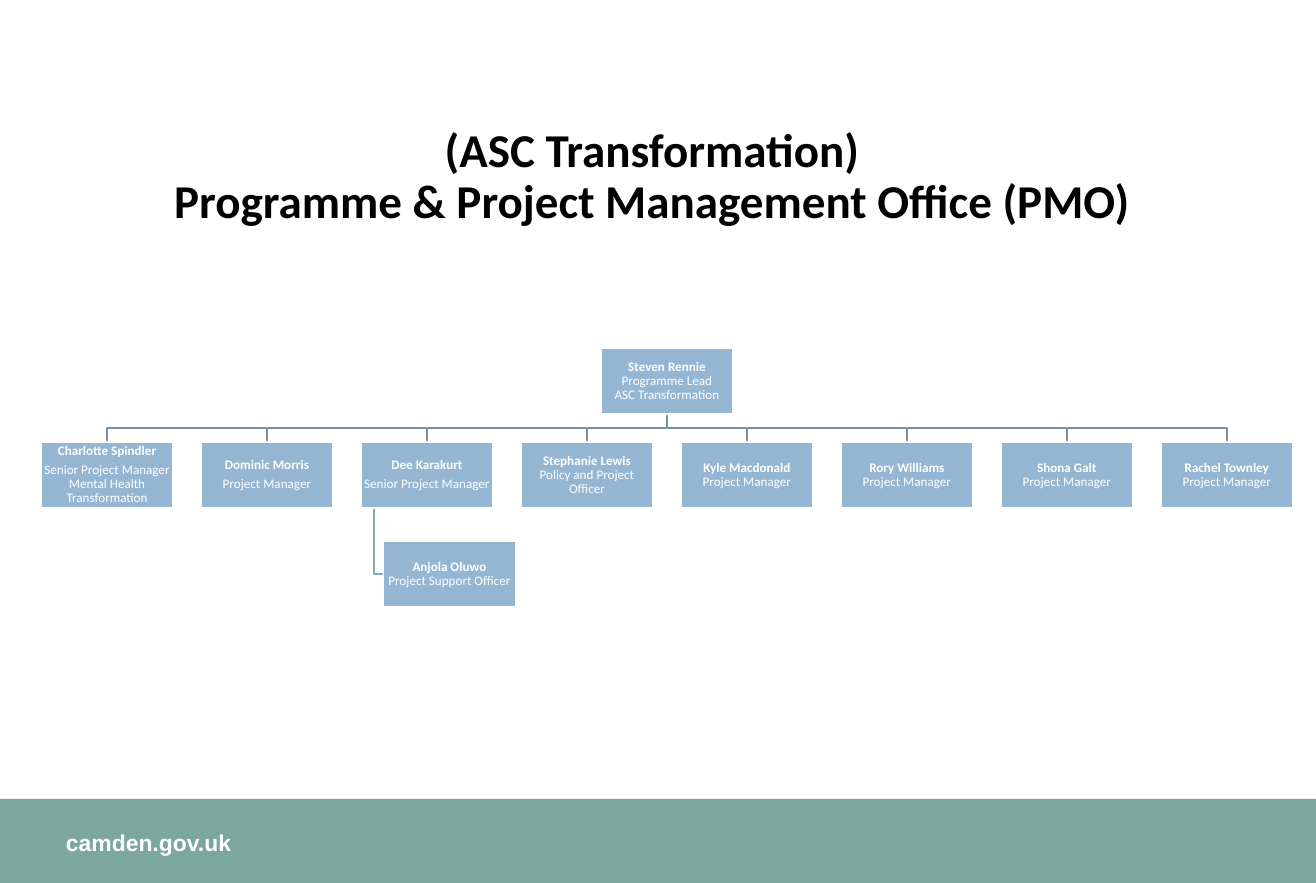
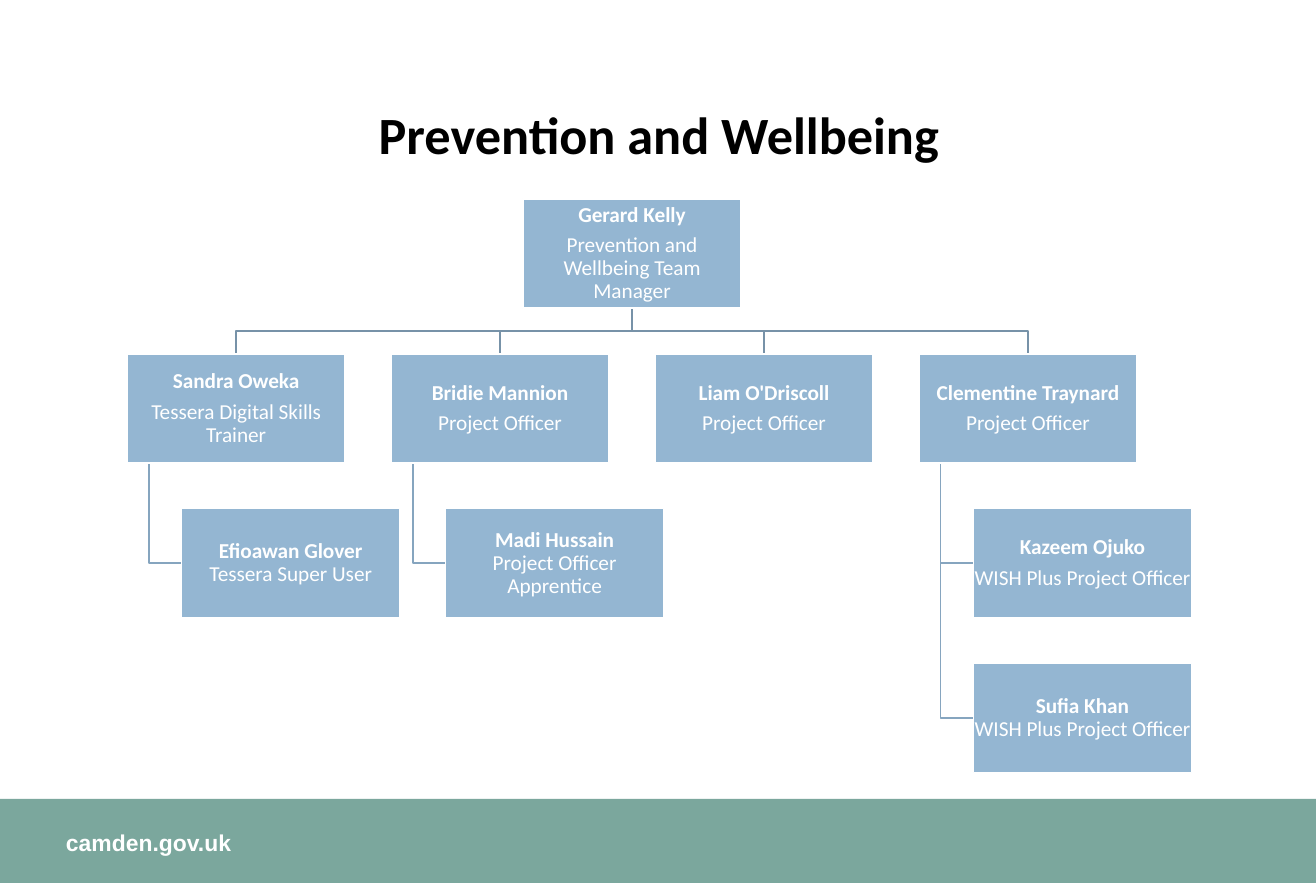
from pptx import Presentation
from pptx.dml.color import RGBColor
from pptx.enum.shapes import MSO_SHAPE
from pptx.enum.text import MSO_ANCHOR, PP_ALIGN
from pptx.util import Pt

RECT = MSO_SHAPE.RECTANGLE
TOP, MIDDLE = MSO_ANCHOR.TOP, MSO_ANCHOR.MIDDLE
LEFT, CENTER = PP_ALIGN.LEFT, PP_ALIGN.CENTER
EMU_PER_PX = 7769
SLIDE_W, SLIDE_H = 1316, 883
BAND_H = 84
WHITE, BLACK, GREEN, BLUE = "FFFFFF", "000000", "7BA79D", "94B6D2"
ROW_LINK, CHILD_LINK = "7792A8", "86A5BF"
GAP = 0.21
TRUNK = 0.1


def px(n):
    return round(n * EMU_PER_PX)


def rgb(value):
    return RGBColor.from_string(value)


def write(tf, paragraphs, size=13, font="Calibri", color=WHITE, align=CENTER,
          anchor=MIDDLE, inset=(0, 0), spacing=0.9, after=0):
    tf.word_wrap = True
    tf.vertical_anchor = anchor
    tf.margin_left = tf.margin_right = px(inset[0])
    tf.margin_top = tf.margin_bottom = px(inset[1])
    for i, lines in enumerate(paragraphs):
        p = tf.paragraphs[0] if i == 0 else tf.add_paragraph()
        p.alignment = align
        p.line_spacing = spacing
        p.space_after = Pt(after if i < len(paragraphs) - 1 else 0)
        for j, (line, bold) in enumerate(lines):
            if j:
                p.add_line_break()
            r = p.add_run()
            r.text = line
            r.font.size = Pt(size)
            r.font.name = font
            r.font.bold = bold
            r.font.color.rgb = rgb(color)


def add_text(s, box, paragraphs, **fmt):
    write(s.shapes.add_textbox(*map(px, box)).text_frame, paragraphs, **fmt)


def add_rect(s, box, fill, line=None):
    sp = s.shapes.add_shape(RECT, *map(px, box))
    sp.shadow.inherit = False
    sp.fill.solid()
    sp.fill.fore_color.rgb = rgb(fill)
    if line:
        sp.line.color.rgb = rgb(line)
        sp.line.width = Pt(1)
    else:
        sp.line.fill.background()
    return sp


def add_link(s, points, color):
    points = [(px(x), px(y)) for x, y in points]
    builder = s.shapes.build_freeform(*points[0], scale=1.0)
    builder.add_line_segments(points[1:], close=False)
    sp = builder.convert_to_shape()
    sp.shadow.inherit = False
    sp.fill.background()
    sp.line.color.rgb = rgb(color)
    sp.line.width = Pt(1)


def add_page(prs, title_box, title, size):
    s = prs.slides.add_slide(prs.slide_layouts[6])
    band_top = SLIDE_H - BAND_H
    add_rect(s, (0, band_top, SLIDE_W, BAND_H), GREEN)
    add_text(s, (66, band_top + 30, 543, 28), [[("camden.gov.uk", True)]],
             size=14, font="Arial", align=LEFT, anchor=TOP, spacing=1.0)
    add_text(s, title_box, [[(line, True) for line in title]],
             size=size, color=BLACK, inset=(12, 6))
    return s


def add_org_chart(s, box, lead, team, size, inset=0, indent=0.25, child_drop=0.71):
    left, top, width = box
    n = len(team)
    w = width / (n + GAP * (n - 1))
    h = w / 2
    pitch = w * (1 + GAP)
    row_top = top + h + GAP * w
    center = left + width / 2
    cards = [(center - w / 2, top, lead)]
    for i, (person, reports) in enumerate(team):
        x = left + i * pitch
        cards.append((x, row_top, person))
        bus = (top + h + row_top) / 2
        add_link(s, [(center, top + h), (center, bus),
                     (x + w / 2, bus), (x + w / 2, row_top)], ROW_LINK)
        for k, report in enumerate(reports, 1):
            y = row_top + k * child_drop * w
            cards.append((x + indent * w, y, report))
            add_link(s, [(x + TRUNK * w, row_top + h), (x + TRUNK * w, y + h / 2),
                         (x + indent * w, y + h / 2)], CHILD_LINK)
    for x, y, paragraphs in cards:
        card = add_rect(s, (x, y, w, h), BLUE, WHITE)
        write(card.text_frame, paragraphs, size=size, inset=(inset, 0), after=0.35 * size)


def spaced(name, role):
    return [[(name, True)], [(role, False)]]


def tight(name, *roles):
    return [[(name, True)] + [(role, False) for role in roles]]


def main():
    prs = Presentation()
    prs.slide_width, prs.slide_height = px(SLIDE_W), px(SLIDE_H)

    s = add_page(prs, (27, 129, 1250, 97),
                 ["(ASC Transformation)", "Programme & Project Management Office (PMO)"], 28.8)
    add_org_chart(
        s, (41, 348, 1252),
        tight("Steven Rennie", "Programme Lead", "ASC Transformation"),
        [
            (spaced("Charlotte Spindler",
                    "Senior Project Manager Mental Health Transformation"), []),
            (spaced("Dominic Morris", "Project Manager"), []),
            (spaced("Dee Karakurt", "Senior Project Manager"),
             [tight("Anjola Oluwo", "Project Support Officer")]),
            (tight("Stephanie Lewis", "Policy and Project Officer"), []),
            (tight("Kyle Macdonald", "Project Manager"), []),
            (tight("Rory Williams", "Project Manager"), []),
            (tight("Shona Galt", "Project Manager"), []),
            (tight("Rachel Townley", "Project Manager"), []),
        ],
        size=8, inset=2, indent=0.17, child_drop=0.75)

    s = add_page(prs, (67, 64, 1184, 147), ["Prevention and Wellbeing"], 32)
    add_org_chart(
        s, (127, 199, 1010),
        spaced("Gerard Kelly", "Prevention and Wellbeing Team Manager"),
        [
            (spaced("Sandra Oweka", "Tessera Digital Skills Trainer"),
             [tight("Efioawan Glover", "Tessera Super User")]),
            (spaced("Bridie Mannion", "Project Officer"),
             [tight("Madi Hussain", "Project Officer Apprentice")]),
            (spaced("Liam O'Driscoll", "Project Officer"), []),
            (spaced("Clementine Traynard", "Project Officer"),
             [spaced("Kazeem Ojuko", "WISH Plus Project Officer"),
              tight("Sufia Khan", "WISH Plus Project Officer")]),
        ],
        size=13)

    prs.save("out.pptx")


if __name__ == "__main__":
    main()
